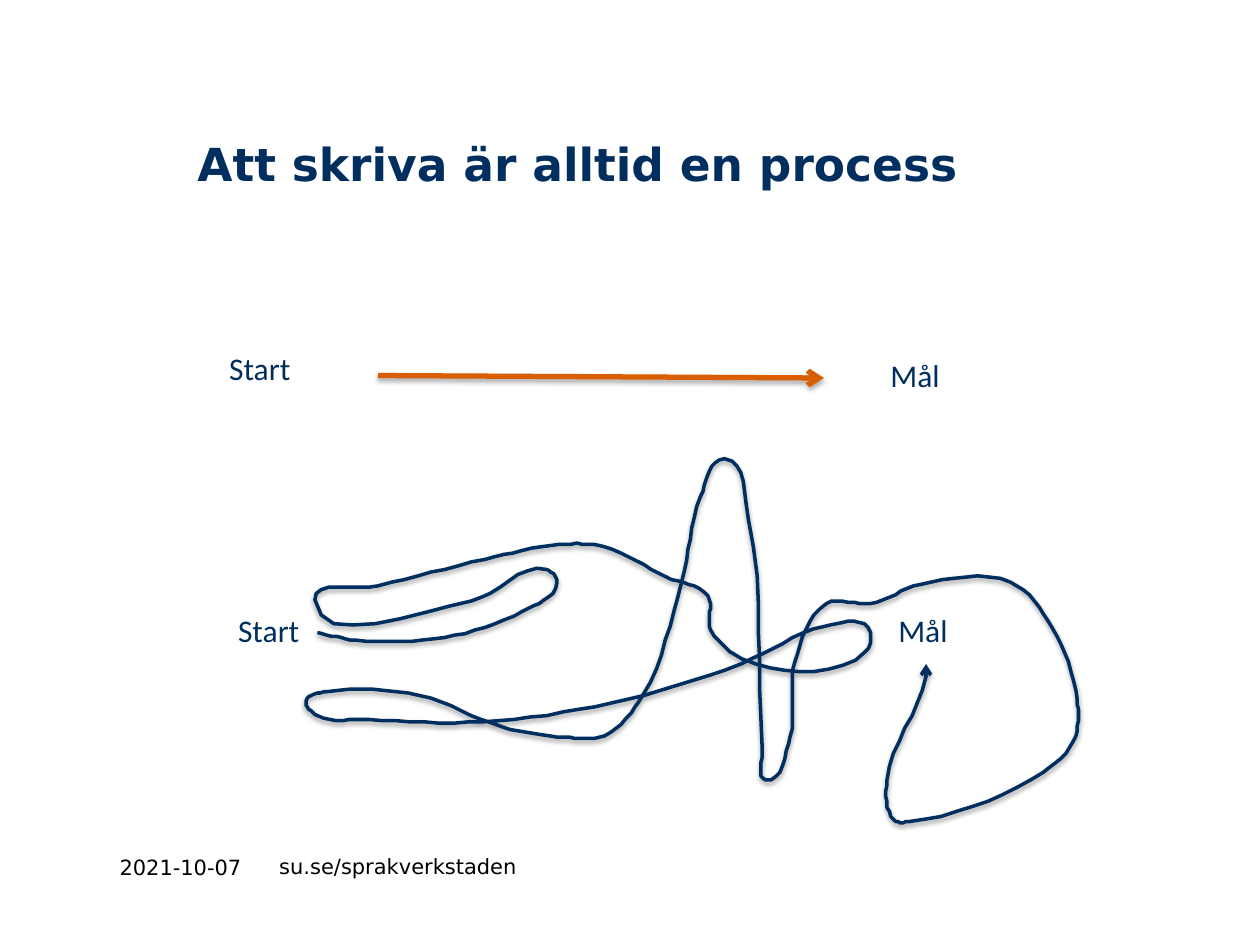
import math
from dataclasses import dataclass

from lxml import etree
from pptx import Presentation
from pptx.dml.color import RGBColor
from pptx.enum import shapes, text
from pptx.oxml import ns
from pptx.util import Cm, Pt


@dataclass(frozen=True)
class Theme:
    navy: RGBColor = RGBColor(0x00, 0x2F, 0x5F)
    orange: RGBColor = RGBColor(0xD9, 0x5E, 0x00)
    black: RGBColor = RGBColor(0, 0, 0)
    heading_font: str = "DejaVu Sans"
    label_font: str = "Calibri"
    title_size: int = 26
    label_size: int = 18
    footer_size: int = 12


# Turning points from start to goal, in hundredths of an inch.
WINDING_WAY = [
    (252, 502), (282, 508), (353, 506), (415, 485), (442, 463), (434, 452),
    (374, 477), (250, 476), (300, 465), (385, 444), (444, 432), (480, 434),
    (529, 458), (562, 473), (564, 500), (600, 527), (687, 517), (689, 498),
    (655, 497), (588, 527), (485, 558), (382, 573), (293, 571), (252, 568),
    (243, 556), (259, 549), (333, 552), (399, 577), (448, 585), (480, 584),
    (510, 552), (541, 462), (556, 394), (575, 364), (594, 412), (605, 594),
    (608, 619), (627, 585), (631, 525), (656, 479), (691, 479), (730, 464),
    (802, 462), (835, 498), (855, 555), (852, 588), (818, 619), (722, 652),
    (710, 651), (704, 619), (735, 537), (735, 527),
]


def unit(start, end):
    length = math.dist(start, end)
    return (end[0] - start[0]) / length, (end[1] - start[1]) / length


def smooth(points, steps=8):
    """Lead a Hermite curve through the points, with no overshoot."""
    last = len(points) - 1
    headings = []
    for i, point in enumerate(points):
        inward = unit(points[max(i - 1, 0)], points[max(i, 1)])
        outward = unit(points[min(i, last - 1)], points[min(i + 1, last)])
        headings.append(unit((-inward[0], -inward[1]), outward))

    curve = [points[0]]
    for i in range(last):
        length = math.dist(points[i], points[i + 1])
        for step in range(1, steps + 1):
            t = step / steps
            rise = t * t * (3 - 2 * t)
            leave = length * t * (1 - t) ** 2
            arrive = length * t * t * (t - 1)
            curve.append(tuple(
                (1 - rise) * a + rise * b + leave * u + arrive * v
                for a, b, u, v in zip(points[i], points[i + 1],
                                      headings[i], headings[i + 1])))
    return curve


class SlideBuilder:
    def __init__(self, slide, theme):
        self.slide = slide
        self.theme = theme

    def add_text(self, words, left, top, width, height, *, size, font, color,
                 bold=False, anchor=text.MSO_ANCHOR.TOP):
        box = self.slide.shapes.add_textbox(
            Cm(left), Cm(top), Cm(width), Cm(height))
        frame = box.text_frame
        frame.word_wrap = True
        frame.vertical_anchor = anchor
        run = frame.paragraphs[0].add_run()
        run.text = words
        run.font.size = Pt(size)
        run.font.name = font
        run.font.bold = bold
        run.font.color.rgb = color

    def add_label(self, words, left, top):
        self.add_text(words, left, top, 1.85, 1.02, size=self.theme.label_size,
                      font=self.theme.label_font, color=self.theme.navy)

    def add_footer(self, words, left, width, height, **style):
        self.add_text(words, left, 17.09, width, height,
                      size=self.theme.footer_size, color=self.theme.black,
                      font=self.theme.heading_font, **style)

    def add_arrow(self, start, end, color, width):
        arrow = self.slide.shapes.add_connector(
            shapes.MSO_CONNECTOR.STRAIGHT, *map(Cm, start + end))
        self.style_arrow(arrow, color, width, shadow_alpha=35)

    def add_winding_arrow(self, points, color, width):
        curve = smooth(points)
        builder = self.slide.shapes.build_freeform(
            *curve[0], scale=Cm(2.54) / 100)
        builder.add_line_segments(curve[1:], close=False)
        way = builder.convert_to_shape()
        way.fill.background()
        self.style_arrow(way, color, width, shadow_alpha=38)

    def style_arrow(self, arrow, color, width, shadow_alpha):
        """Set the line, its arrowhead and a soft shadow straight below."""
        arrow.line.color.rgb = color
        arrow.line.width = Pt(width)
        properties = arrow.element.spPr
        line = properties.find(ns.qn("a:ln"))
        etree.SubElement(line, ns.qn("a:round"))
        etree.SubElement(line, ns.qn("a:tailEnd"), type="arrow")
        effects = etree.SubElement(properties, ns.qn("a:effectLst"))
        shadow = etree.SubElement(
            effects, ns.qn("a:outerShdw"), blurRad=str(int(Pt(3.1))),
            dist=str(int(Pt(1.7))), dir="5400000", rotWithShape="0")
        black = etree.SubElement(shadow, ns.qn("a:srgbClr"), val="000000")
        etree.SubElement(black, ns.qn("a:alpha"), val=str(shadow_alpha * 1000))


def main():
    deck = Presentation()
    deck.slide_width, deck.slide_height = Cm(25.4), Cm(19.05)
    theme = Theme()
    page = SlideBuilder(deck.slides.add_slide(deck.slide_layouts[6]), theme)

    page.add_text("Att skriva är alltid en process", 3.73, 2.62, 19.02, 2.21,
                  size=theme.title_size, font=theme.heading_font,
                  color=theme.navy, bold=True)
    page.add_footer("2021-10-07", 2.16, 3.12, 0.79,
                    anchor=text.MSO_ANCHOR.MIDDLE)
    page.add_footer("su.se/sprakverkstaden", 5.38, 12.47, 1.45)

    page.add_arrow((7.62, 7.57), (16.61, 7.62), theme.orange, 3)
    for words, left, top in [("Start", 4.37, 6.91), ("Mål", 17.7, 7.06),
                             ("Start", 4.55, 12.19), ("Mål", 17.86, 12.19)]:
        page.add_label(words, left, top)
    page.add_winding_arrow(WINDING_WAY, theme.navy, 2)

    deck.save("out.pptx")


if __name__ == "__main__":
    main()
